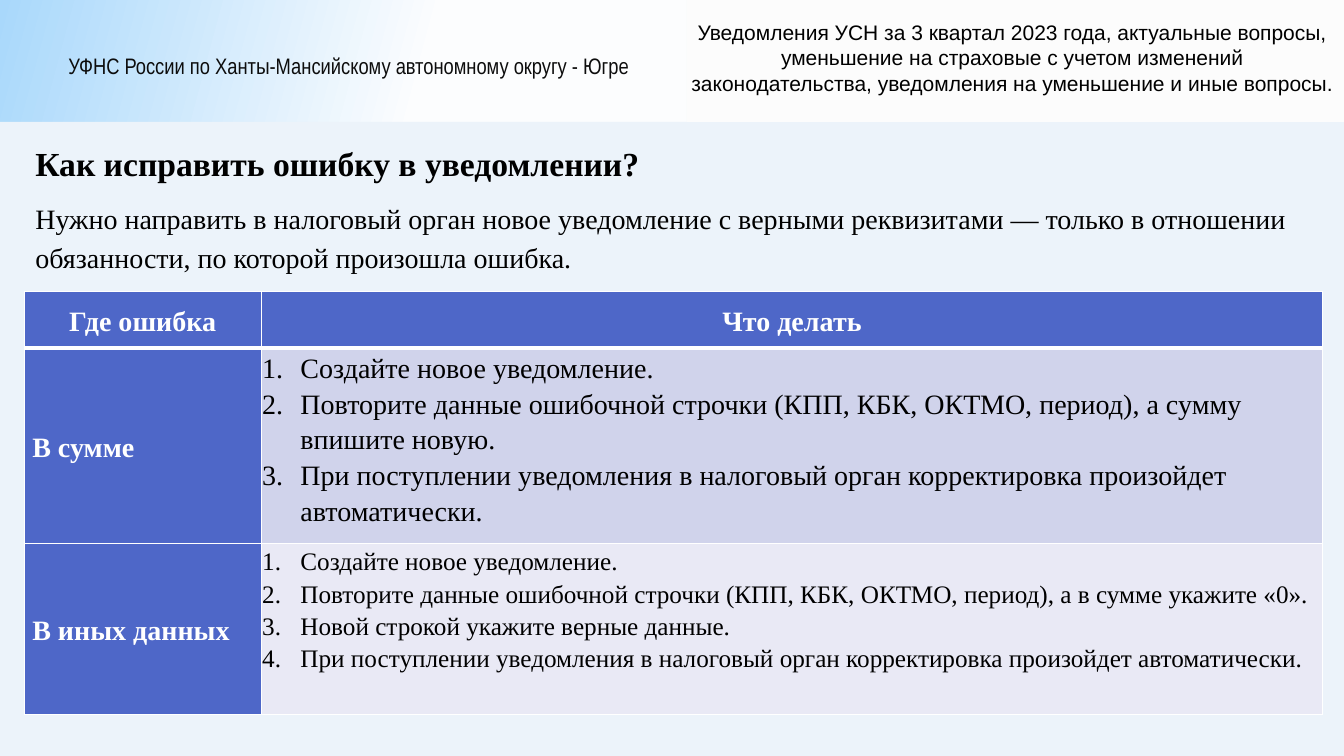
"""Build a slide on correcting an error in a tax notification."""
from lxml.etree import SubElement
from pptx import Presentation
from pptx.dml.color import RGBColor
from pptx.enum.shapes import MSO_SHAPE as Shape
from pptx.enum.text import MSO_ANCHOR as Anchor, PP_ALIGN as Align
from pptx.oxml.ns import qn
from pptx.util import Inches, Pt

OFFICE = "УФНС России по Ханты-Мансийскому автономному округу - Югре"
TOPIC = ("Уведомления УСН за 3 квартал 2023 года, актуальные вопросы, уменьшение на страховые "
         "с учетом изменений законодательства, уведомления на уменьшение и иные вопросы.")
TITLE = "Как исправить ошибку в уведомлении?"
ANSWER = ("Нужно направить в налоговый орган новое уведомление с верными реквизитами — "
          "только в отношении обязанности, по которой произошла ошибка.")
HEADINGS = ("Где ошибка", "Что делать")
CREATE = "Создайте новое уведомление."
REPEAT = "Повторите данные ошибочной строчки (КПП, КБК, ОКТМО, период), а "
RESULT = "При поступлении уведомления в налоговый орган корректировка произойдет автоматически."
CASES = [
    ("В сумме", 20, "D0D3EB", [CREATE, REPEAT + "сумму впишите новую.", RESULT]),
    ("В иных данных", 18, "E9E9F5",
     [CREATE, REPEAT + "в сумме укажите «0».", "Новой строкой укажите верные данные.", RESULT]),
]
WIDTH, HEIGHT, BAND, SPLIT = 13.33, 7.5, 1.21, 6.81
TEXT_LEFT, TABLE_LEFT, TABLE_TOP = 0.25, 0.24, 2.89
COLUMNS, ROWS = (2.35, 10.53), (0.56, 1.94, 1.7)
BLUE, WHITE, BLACK = "4E67C8", "FFFFFF", "000000"
SERIF = "Times New Roman"
HEADING = {"name": SERIF, "size": Pt(20), "bold": True, "color": WHITE}


def rgb(value):
    return RGBColor.from_string(value)


def place(shape, left, top, width, height):
    for name, value in zip(("left", "top", "width", "height"), (left, top, width, height)):
        setattr(shape, name, Inches(value))


def write(frame, lines, font, layout=None, bullet=None, indent=0):
    frame.word_wrap = True
    for index, line in enumerate(lines):
        paragraph = frame.paragraphs[0] if index == 0 else frame.add_paragraph()
        paragraph.text = line
        if bullet:
            properties = paragraph._p.get_or_add_pPr()
            properties.set("marL", str(Inches(indent)))
            properties.set("indent", str(-Inches(indent)))
            kind = {"type": "arabicPeriod"} if bullet == "buAutoNum" else {}
            SubElement(properties, qn("a:" + bullet), kind)
        for name, value in {"space_before": Pt(0), **(layout or {})}.items():
            setattr(paragraph, name, value)
        for name, value in font.items():
            if name == "color":
                paragraph.font.color.rgb = rgb(value)
            else:
                setattr(paragraph.font, name, value)


def add_panel(slide, box, color):
    panel = slide.shapes.add_shape(Shape.RECTANGLE, 0, 0, 0, 0)
    place(panel, *box)
    panel.shadow.inherit = False
    panel.line.fill.background()
    panel.fill.solid()
    panel.fill.fore_color.rgb = rgb(color)
    return panel


def add_panels(slide):
    band = add_panel(slide, (0, 0, SPLIT, BAND), WHITE)
    band.fill.gradient()
    band.fill.gradient_angle = 345
    for stop, position, color in zip(band.fill.gradient_stops, (0, 0.62), ("A9D8FB", "FCFDFE")):
        stop.position = position
        stop.color.rgb = rgb(color)
    add_panel(slide, (0, BAND, WIDTH, HEIGHT - BAND), "ECF3FA")
    add_panel(slide, (SPLIT, 0, WIDTH - SPLIT, BAND), "FCFCFC")


def add_labels(slide):
    labels = [
        (OFFICE, (0.58, 0.41, 5.96, 0.49), ("Arial Narrow", 16, "0D0D0D"), Align.LEFT),
        (TOPIC, (6.75, 0.14, 6.58, 0.86), ("Arial", 15, BLACK), Align.CENTER),
    ]
    for text, box, (name, size, color), align in labels:
        label = slide.shapes.add_textbox(0, 0, 0, 0)
        place(label, *box)
        label.text_frame.vertical_anchor = Anchor.MIDDLE
        write(label.text_frame, [text], {"name": name, "size": Pt(size), "color": color},
              {"alignment": align})


def format_cell(cell, color, anchor, row):
    properties = cell._tc.get_or_add_tcPr()
    for side in ("L", "R", "T", "B"):
        thick = (row, side) in ((0, "B"), (1, "T"))
        line = SubElement(properties, qn("a:ln" + side), {"w": str(Pt(3 if thick else 1))})
        SubElement(SubElement(line, qn("a:solidFill")), qn("a:srgbClr"), {"val": WHITE})
    cell.fill.solid()
    cell.fill.fore_color.rgb = rgb(color)
    cell.vertical_anchor = anchor
    for side in ("left", "right", "top", "bottom"):
        setattr(cell, "margin_" + side, Inches(0.01))


def add_cases(slide):
    table = slide.shapes.add_table(
        len(ROWS), len(COLUMNS), Inches(TABLE_LEFT), Inches(TABLE_TOP),
        Inches(sum(COLUMNS)), Inches(sum(ROWS))).table
    for column, width in zip(table.columns, COLUMNS):
        column.width = Inches(width)
    for row, height in zip(table.rows, ROWS):
        row.height = Inches(height)
    for column, heading in enumerate(HEADINGS):
        cell = table.cell(0, column)
        format_cell(cell, BLUE, Anchor.MIDDLE, 0)
        write(cell.text_frame, [heading], HEADING,
              {"alignment": Align.CENTER, "line_spacing": 1.15})
    for row, (error, size, color, steps) in enumerate(CASES, 1):
        name_cell, step_cell = table.cell(row, 0), table.cell(row, 1)
        format_cell(name_cell, BLUE, Anchor.MIDDLE, row)
        name_cell.margin_left = Inches(0.08)
        write(name_cell.text_frame, [error], HEADING, {"line_spacing": 1.15})
        format_cell(step_cell, color, Anchor.TOP, row)
        font = {"name": SERIF, "size": Pt(size), "bold": False, "color": BLACK}
        write(step_cell.text_frame, steps, font, {"line_spacing": 1.15}, "buAutoNum", 0.38)


def main():
    presentation = Presentation()
    presentation.slide_width, presentation.slide_height = Inches(WIDTH), Inches(HEIGHT)
    slide = presentation.slides.add_slide(presentation.slide_layouts[1])
    add_panels(slide)
    add_labels(slide)
    texts = [
        (slide.shapes.title, TITLE, 1.31, 0.54, 24, True),
        (slide.placeholders[1], ANSWER, 1.9, 0.89, 20, False),
    ]
    for holder, text, top, height, size, bold in texts:
        place(holder, TEXT_LEFT, top, 12.85, height)
        slide.shapes._spTree.append(holder._element)
        holder.text_frame.vertical_anchor = Anchor.TOP
        font = {"name": SERIF, "size": Pt(size), "bold": bold, "color": BLACK}
        write(holder.text_frame, [text], font,
              {"alignment": Align.LEFT, "line_spacing": 1.15}, "buNone")
    add_cases(slide)
    presentation.save("out.pptx")


if __name__ == "__main__":
    main()
